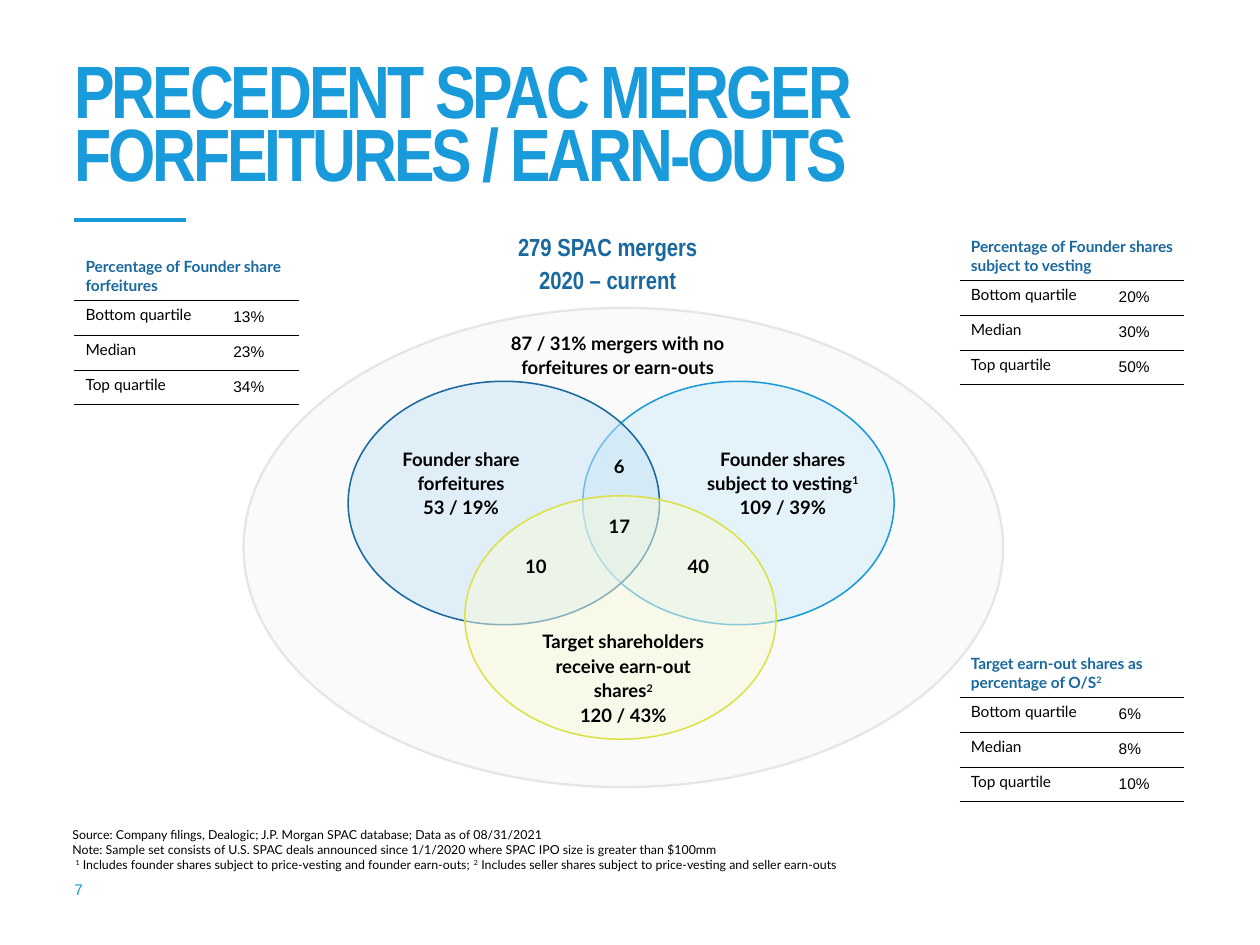
import pptx
import pptx.util
import pptx.dml.color
import pptx.enum.shapes
import pptx.enum.text
import pptx.oxml
import pptx.oxml.ns
import lxml.etree

COLORS = {"sky": "199ADB", "navy": "19689E", "lime": "DCE146", "black": "000000",
          "grey": "E6E6E6", "pale grey": "FAFAFA", "pale sky": "CFEBFA",
          "pale navy": "C7E3F6", "pale lime": "F8F9DA"}
RGB = {name: pptx.dml.color.RGBColor.from_string(code) for name, code in COLORS.items()}
Pt = pptx.util.Pt
qn = pptx.oxml.ns.qn
Align = pptx.enum.text.PP_ALIGN
Anchor = pptx.enum.text.MSO_ANCHOR

deck = pptx.Presentation()
deck.slide_width = pptx.util.Inches(11.33)
deck.slide_height = pptx.util.Inches(8.5)
page = deck.slides.add_slide(deck.slide_layouts[6])


def place(*shares):
    """Turn x, y, x, y ... percentages of the slide into lengths."""
    sides = (deck.slide_width, deck.slide_height)
    return [int(sides[i % 2] * share / 100) for i, share in enumerate(shares)]


def write(frame, lines, size, font="Lato", color="black", bold=False,
          align=Align.LEFT, spacing=None, anchor=Anchor.TOP):
    """Fill a text frame; text between carets is superscript."""
    frame.word_wrap = True
    frame.vertical_anchor = anchor
    for index, line in enumerate(lines):
        para = frame.paragraphs[0] if index == 0 else frame.add_paragraph()
        para.alignment = align
        if spacing:
            para.line_spacing = spacing
        para.font.size = Pt(size)
        para.font.name = font
        para.font.bold = bold
        para.font.color.rgb = RGB[color]
        for part, text in enumerate(line.split("^")):
            if text:
                span = para.add_run()
                span.text = text
                if part % 2:
                    span._r.get_or_add_rPr().set("baseline", "30000")


# Title and the rule below it
box = page.shapes.add_textbox(*place(5.91, 5.88, 88.26, 15.18))
box.text_frame.margin_left = 0
write(box.text_frame, ["PRECEDENT SPAC MERGER FORFEITURES / EARN-OUTS"], 48,
      "Arial Narrow", "sky", True, spacing=0.7, anchor=Anchor.BOTTOM)
for span in box.text_frame.paragraphs[0].runs:
    span._r.get_or_add_rPr().set("spc", "-200")

rule = page.shapes.add_connector(pptx.enum.shapes.MSO_CONNECTOR.STRAIGHT,
                                 *place(5.91, 23.29, 14.74, 23.29))
rule.line.color.rgb = RGB["sky"]
rule.line.width = Pt(3)
lxml.etree.SubElement(rule._element.spPr, qn("a:effectLst"))

# Page number and footnotes
footers = [
    ((5.91, 89.65, 2.29, 5.41), ["7"], 10, "Arial", "sky", Anchor.BOTTOM),
    ((5.74, 87.53, 88, 4.71), [
        "Source: Company filings, Dealogic; J.P. Morgan SPAC database; Data as of 08/31/2021",
        "Note: Sample set consists of U.S. SPAC deals announced since 1/1/2020 "
        "where SPAC IPO size is greater than $100mm",
        " ^1^ Includes founder shares subject to price-vesting and founder earn-outs; "
        "^2^ Includes seller shares subject to price-vesting and seller earn-outs",
    ], 8, "Lato", "black", Anchor.TOP),
]
for area, lines, size, font, color, anchor in footers:
    frame = page.shapes.add_textbox(*place(*area)).text_frame
    frame.margin_left = frame.margin_right = frame.margin_top = frame.margin_bottom = 0
    write(frame, lines, size, font, color, anchor=anchor)

# Venn diagram: all mergers, then the three overlapping groups
ovals = [
    ((19.33, 32.59, 60.28, 50.71), "pale grey", "grey", 1.5, 100),
    ((46.25, 40.35, 24.71, 25.76), "pale sky", "sky", 1, 50),
    ((27.63, 40.35, 24.71, 25.76), "pale navy", "navy", 1, 50),
    ((36.89, 52.47, 24.71, 25.76), "pale lime", "lime", 1, 50),
]
for area, fill, outline, weight, opacity in ovals:
    oval = page.shapes.add_shape(
        pptx.enum.shapes.MSO_SHAPE.FLOWCHART_CONNECTOR, *place(*area))
    oval.shadow.inherit = False
    oval.fill.solid()
    oval.fill.fore_color.rgb = RGB[fill]
    oval.line.color.rgb = RGB[outline]
    oval.line.width = Pt(weight)
    if opacity < 100:
        tint = oval._element.spPr.find(qn("a:solidFill"))[0]
        lxml.etree.SubElement(tint, qn("a:alpha")).set("val", str(opacity * 1000))

# Diagram heading
heading = page.shapes.add_textbox(*place(30.27, 23.65, 35.92, 7.88))
write(heading.text_frame, ["279 SPAC mergers", "2020 – current"], 16, "Arial Narrow",
      "navy", True, Align.CENTER, 1.1)

# Diagram labels and overlap counts
labels = [
    ((38.22, 34.59, 21.62, 5.76), ["87 / 31% mergers with no forfeitures or earn-outs"]),
    ((54.81, 46.94, 14.65, 8.12), ["Founder shares subject to vesting^1^", "109 / 39%"]),
    ((30.63, 46.94, 11.92, 8.12), ["Founder share forfeitures", "53 / 19%"]),
    ((41.04, 66.35, 16.86, 10.59),
     ["Target shareholders receive earn-out shares^2^", "120 / 43%"]),
]
counts = [("6", 43.95, 47.53), ("17", 43.95, 53.88), ("10", 37.33, 58.12), ("40", 50.22, 58.12)]
labels += [((left, top, 10.41, 3.29), [count]) for count, left, top in counts]
for area, lines in labels:
    label = page.shapes.add_textbox(*place(*area))
    write(label.text_frame, lines, 12, bold=True, align=Align.CENTER, spacing=1.1,
          anchor=Anchor.MIDDLE)

# Quartile tables
tables = [
    (76.17, 23.88, "Percentage of Founder shares subject to vesting", ["20%", "30%", "50%"]),
    (5.91, 26, "Percentage of Founder share forfeitures", ["13%", "23%", "34%"]),
    (76.17, 68, "Target earn-out shares as percentage of O/S^2^", ["6%", "8%", "10%"]),
]
quartiles = ["Bottom quartile", "Median", "Top quartile"]
column_shares = [10.59, 2.03, 5.21]
row_shares = [5.76, 3.69, 3.69, 3.69]
row_lines = [0, 0.5, 0.25, 0.25, 0.5]
for left, top, header, values in tables:
    table = page.shapes.add_table(
        4, 3, *place(left, top, sum(column_shares), sum(row_shares))).table
    table.first_row = table.horz_banding = False
    for column, share in zip(table.columns, column_shares):
        column.width = place(share)[0]
    for row, share in zip(table.rows, row_shares):
        row.height = place(0, share)[1]
    table.cell(0, 0).merge(table.cell(0, 2))
    write(table.cell(0, 0).text_frame, [header], 10, color="navy", bold=True)
    table.cell(0, 0).vertical_anchor = Anchor.BOTTOM

    for r, (quartile, value) in enumerate(zip(quartiles, values), 1):
        write(table.cell(r, 0).text_frame, [quartile], 10)
        write(table.cell(r, 1).text_frame, [""], 10)
        write(table.cell(r, 2).text_frame, [value], 10, "Arial")
        table.cell(r, 0).vertical_anchor = Anchor.TOP
        table.cell(r, 2).vertical_anchor = Anchor.MIDDLE
        for cell in (table.cell(r, 1), table.cell(r, 2)):
            cell.margin_left = cell.margin_right = cell.margin_top = cell.margin_bottom = 0

    # Horizontal lines only, and no fill
    for r in range(4):
        for c in range(3):
            cell = table.cell(r, c)
            props = cell._tc.get_or_add_tcPr()
            for side, weight in (("L", 0), ("R", 0), ("T", row_lines[r]), ("B", row_lines[r + 1])):
                edge = lxml.etree.SubElement(props, qn("a:ln" + side), w=str(int(Pt(weight))))
                if weight:
                    paint = lxml.etree.SubElement(edge, qn("a:solidFill"))
                    lxml.etree.SubElement(paint, qn("a:srgbClr"), val=COLORS["black"])
                else:
                    lxml.etree.SubElement(edge, qn("a:noFill"))
            cell.fill.background()

deck.save("out.pptx")
